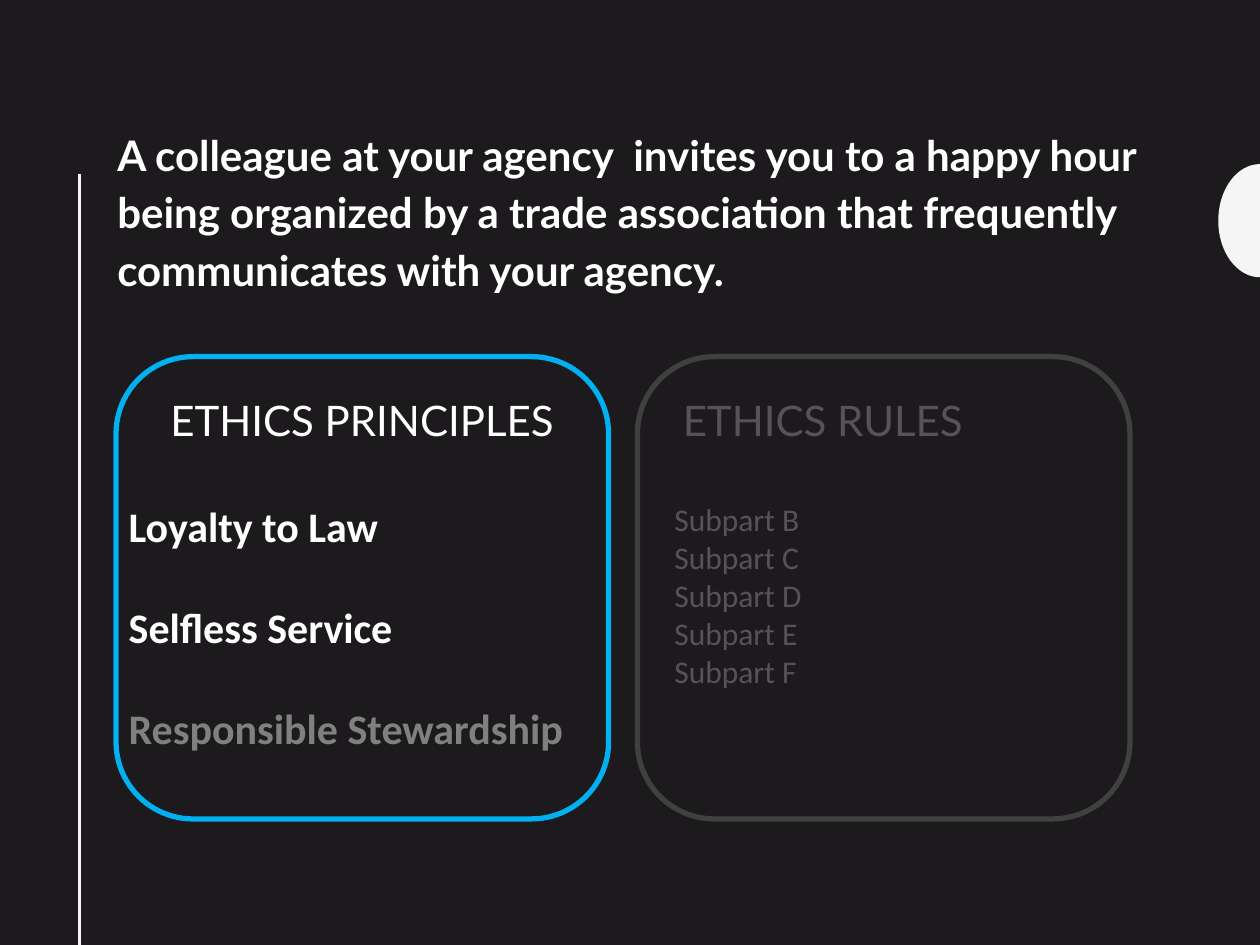
import math

from lxml import etree
from pptx import Presentation
from pptx import util as u
from pptx.dml.color import RGBColor
from pptx.enum import shapes, text
from pptx.oxml import ns

BACKGROUND = RGBColor(0x1D, 0x1A, 0x1D)
TRIM = RGBColor(0xF5, 0xF5, 0xF5)
WHITE = RGBColor(0xFF, 0xFF, 0xFF)
BLUE = RGBColor(0x00, 0xB0, 0xF0)
DIM_LINE = RGBColor(0x40, 0x40, 0x40)
DIM_TEXT = RGBColor(0x59, 0x50, 0x59)
GREY = RGBColor(0x80, 0x80, 0x80)
HEADING_FONT, LIST_FONT = "Lato", "Calibri"


class Deck:
    """Holds the style and the current slide; lengths are in centimetres."""

    def __init__(self):
        self.prs = Presentation()
        self.prs.slide_width, self.prs.slide_height = u.Cm(25.4), u.Cm(19.05)

    def add_slide(self, layout):
        self.s = self.prs.slides.add_slide(self.prs.slide_layouts[layout])
        fill = self.s.background.fill
        fill.solid()
        fill.fore_color.rgb = BACKGROUND

    def fill_placeholder(self, idx, box, lines, font, size,
                         bold=False, spacing=1.0, gap=0):
        """Write (wording, colour) lines into a placeholder, one paragraph each."""
        sp = self.s.placeholders[idx]
        sp.left, sp.top, sp.width, sp.height = map(u.Cm, box)
        tf = sp.text_frame
        tf.word_wrap = True
        tf.auto_size = text.MSO_AUTO_SIZE.NONE
        tf.vertical_anchor = text.MSO_ANCHOR.TOP
        for i, (wording, color) in enumerate(lines):
            p = tf.add_paragraph() if i else tf.paragraphs[0]
            p.alignment = text.PP_ALIGN.LEFT
            p.line_spacing = spacing
            p.space_before = u.Pt(gap if i else 0)
            p.space_after = u.Pt(0)
            pPr = p._p.get_or_add_pPr()
            pPr.set("marL", "0")
            pPr.set("indent", "0")
            etree.SubElement(pPr, ns.qn("a:buNone"))
            r = p.add_run()
            r.text = wording
            r.font.name, r.font.size, r.font.bold = font, u.Pt(size), bold
            r.font.color.rgb = color

    def panel(self, box, color):
        sp = self.s.shapes.add_shape(
            shapes.MSO_SHAPE.ROUNDED_RECTANGLE, *map(u.Cm, box))
        sp.shadow.inherit = False
        sp.fill.background()
        sp.line.color.rgb = color
        sp.line.width = u.Pt(3)

    def line(self, x1, y1, x2, y2, color, width):
        ln = self.s.shapes.add_connector(
            shapes.MSO_CONNECTOR.STRAIGHT, *map(u.Cm, (x1, y1, x2, y2)))
        ln.line.color.rgb = color
        ln.line.width = u.Pt(width)
        etree.SubElement(ln._element.spPr, ns.qn("a:effectLst"))

    def left_half_ellipse(self, cx, cy, rx, ry, color, steps=48):
        angles = [math.pi * (0.5 + i / steps) for i in range(steps + 1)]
        points = [(u.Cm(cx + rx * math.cos(a)), u.Cm(cy + ry * math.sin(a)))
                  for a in angles]
        fb = self.s.shapes.build_freeform(*points[0])
        fb.add_line_segments(points[1:], close=True)
        sp = fb.convert_to_shape()
        sp.shadow.inherit = False
        sp.fill.solid()
        sp.fill.fore_color.rgb = color
        sp.line.fill.background()


def main():
    deck = Deck()
    deck.add_slide(4)  # Comparison layout

    # Edge decoration
    deck.left_half_ellipse(25.4, 4.45, 0.84, 1.14, TRIM)
    deck.line(1.6, 3.5, 1.6, 19.05, TRIM, 2)

    # Scenario
    scenario = ("A colleague at your agency  invites you to a happy hour being "
                "organized by a trade association that frequently communicates "
                "with your agency.")
    deck.fill_placeholder(0, (2.11, 2.34, 21.59, 4.6), [(scenario, WHITE)],
                          HEADING_FONT, 24, bold=True, spacing=1.14)

    # Panels with their headings
    panels = [(1, 2.34, 3.18, "ETHICS PRINCIPLES", WHITE, BLUE),
              (3, 12.85, 13.51, "ETHICS RULES", DIM_TEXT, DIM_LINE)]
    for idx, left, text_left, heading, color, outline in panels:
        deck.fill_placeholder(idx, (text_left, 7.82, 9.17, 1.27),
                              [(heading, color)], HEADING_FONT, 24)
        deck.panel((left, 7.19, 9.93, 9.32), outline)

    # Lists
    principles = [("Loyalty to Law", WHITE), ("Selfless Service", WHITE),
                  ("Responsible Stewardship", GREY)]
    deck.fill_placeholder(2, (2.34, 9.96, 9.75, 5.38), principles,
                          LIST_FONT, 24, bold=True, gap=29)
    rules = [(f"Subpart {letter}", DIM_TEXT) for letter in "BCDEF"]
    deck.fill_placeholder(4, (13.34, 9.96, 12.06, 4.11), rules, LIST_FONT, 18)

    deck.prs.save("out.pptx")


if __name__ == "__main__":
    main()
